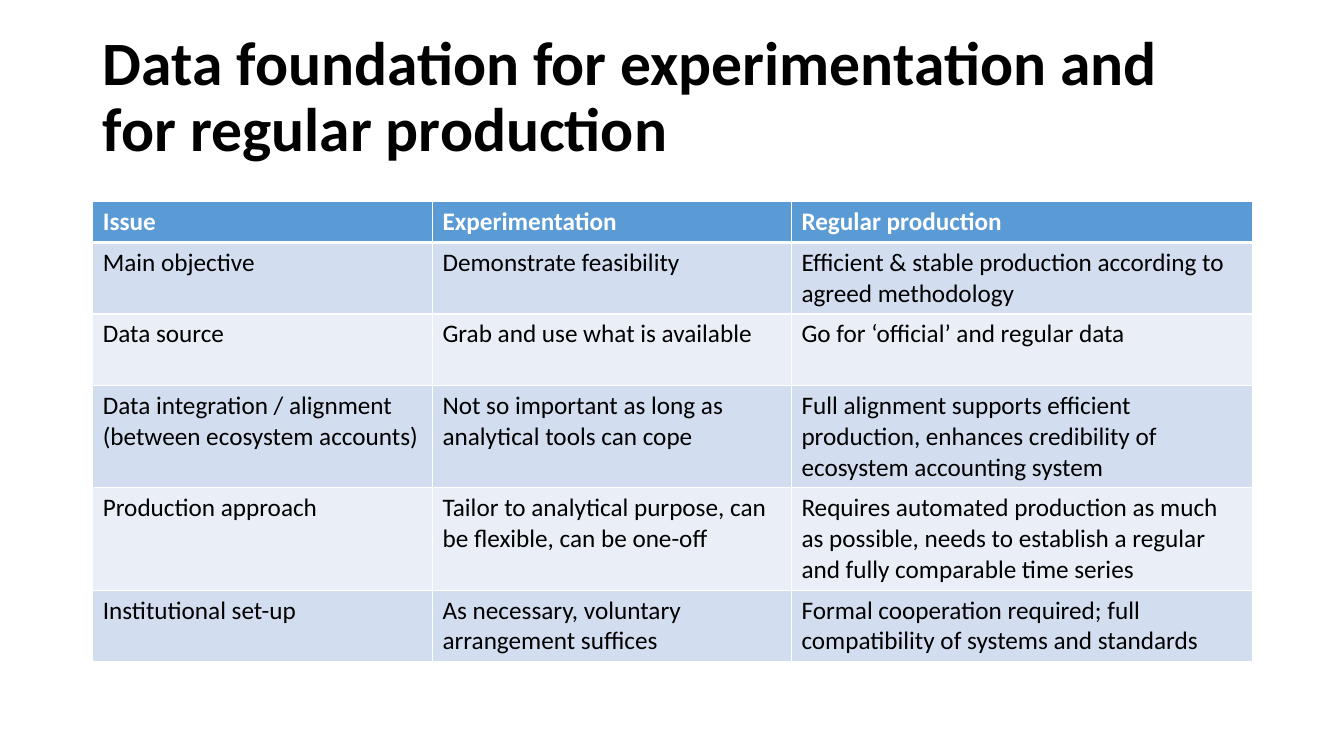
from lxml import etree
from pptx import Presentation
from pptx import util as u
from pptx.dml.color import RGBColor
from pptx.enum import text
from pptx.oxml import ns

THEME = {
    "font": "Calibri", "title": 44, "body": 18,
    "ink": "000000", "paper": "FFFFFF", "head": "5B9BD5",
    "bands": ["EAEFF7", "D2DEEF"],
}
WIDE, HIGH = 13.33, 7.5
LEFT, SPAN = 0.92, 11.5
COLS = [3.37, 3.56, 4.57]
LINES = [1, 2, 2, 3, 3, 2]  # text lines that each row holds
PAD, LINE = 0.1, 0.305

ROWS = [
    ["Issue", "Experimentation", "Regular production"],
    ["Main objective", "Demonstrate feasibility",
     "Efficient & stable production according to agreed methodology"],
    ["Data source", "Grab and use what is available",
     "Go for ‘official’ and regular data"],
    ["Data integration / alignment (between ecosystem accounts)",
     "Not so important as long as analytical tools can cope",
     "Full alignment supports efficient production, enhances credibility "
     "of ecosystem accounting system"],
    ["Production approach",
     "Tailor to analytical purpose, can be flexible, can be one-off",
     "Requires automated production as much as possible, needs to establish "
     "a regular and fully comparable time series"],
    ["Institutional set-up", "As necessary, voluntary arrangement suffices",
     "Formal cooperation required; full compatibility of systems and standards"],
]


def style(para, size, color, bold):
    font = para.font
    font.name, font.size, font.bold = THEME["font"], u.Pt(size), bold
    font.color.rgb = RGBColor.from_string(color)


def border(cell, sides):
    props = cell._tc.get_or_add_tcPr()
    for i, (side, width) in enumerate(sides.items()):
        line = etree.Element(ns.qn("a:ln" + side), w=str(u.Pt(width)))
        fill = etree.SubElement(line, ns.qn("a:solidFill"))
        etree.SubElement(fill, ns.qn("a:srgbClr"), val=THEME["paper"])
        props.insert(i, line)


deck = Presentation()
deck.slide_width, deck.slide_height = u.Inches(WIDE), u.Inches(HIGH)
slide = deck.slides.add_slide(deck.slide_layouts[6])

# Title
box = slide.shapes.add_textbox(
    u.Inches(LEFT), u.Inches(0.25), u.Inches(SPAN), u.Inches(1.45))
frame = box.text_frame
frame.word_wrap = True
frame.vertical_anchor = text.MSO_ANCHOR.MIDDLE
frame.text = "Data foundation for experimentation and for regular production"
frame.paragraphs[0].line_spacing = 0.9
style(frame.paragraphs[0], THEME["title"], THEME["ink"], True)

# Table grid
tall = [PAD + LINE * n for n in LINES]
grid = slide.shapes.add_table(
    len(ROWS), len(COLS), u.Inches(LEFT), u.Inches(2),
    u.Inches(SPAN), u.Inches(sum(tall))).table
for col, width in zip(grid.columns, COLS):
    col.width = u.Inches(width)
for row, height in zip(grid.rows, tall):
    row.height = u.Inches(height)

# Cells: a coloured head row, then alternating bands
for r, words in enumerate(ROWS):
    head = r == 0
    shade = THEME["head"] if head else THEME["bands"][r % 2]
    for c, word in enumerate(words):
        cell = grid.cell(r, c)
        cell.text = word
        style(cell.text_frame.paragraphs[0], THEME["body"],
              THEME["paper"] if head else THEME["ink"], head)
        cell.fill.solid()
        cell.fill.fore_color.rgb = RGBColor.from_string(shade)
        border(cell, {"L": 1, "R": 1, "T": 3 if r == 1 else 1,
                      "B": 3 if head else 1})

deck.save("out.pptx")
